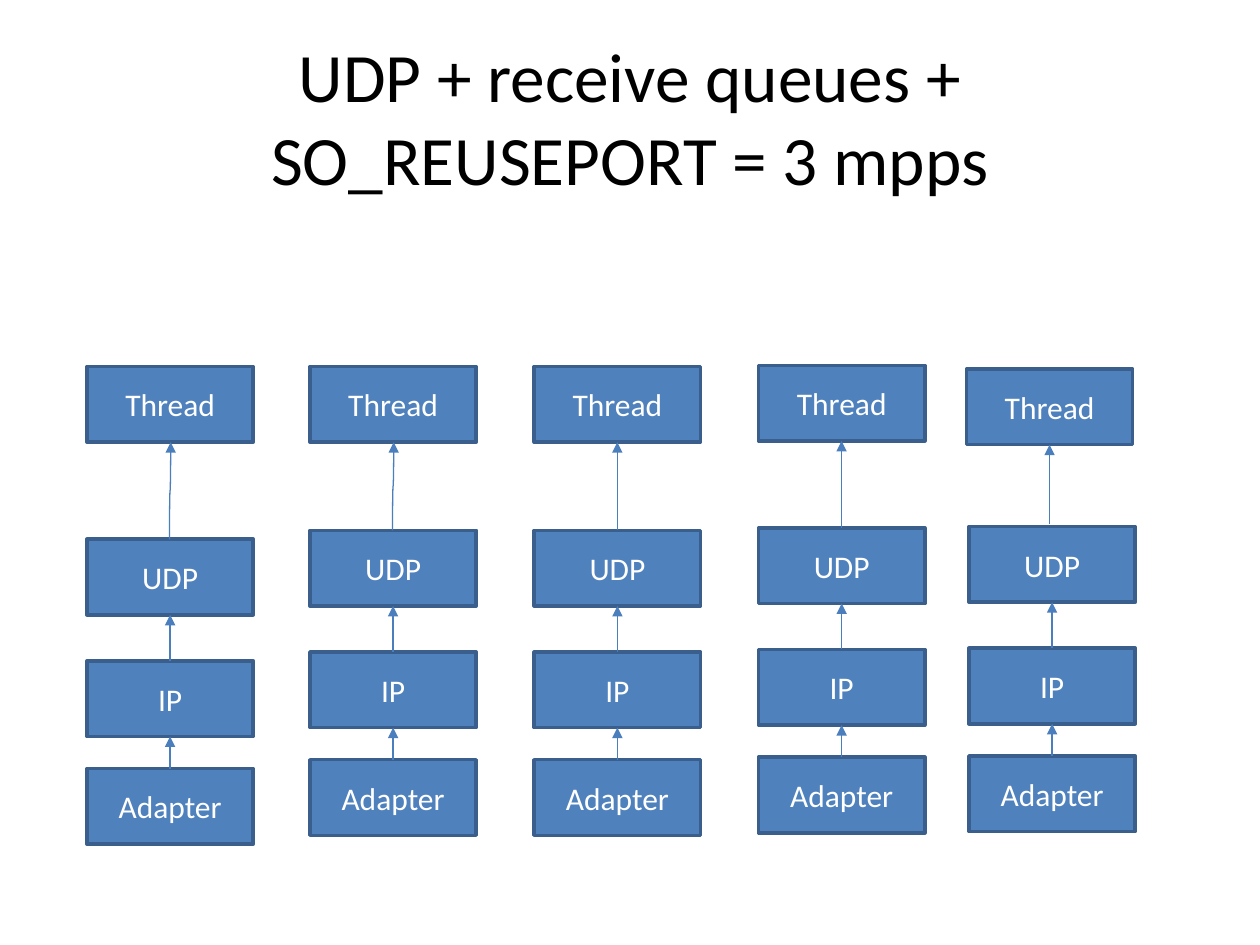
from pptx import Presentation
from pptx.dml.color import RGBColor
from pptx.enum.shapes import MSO_CONNECTOR, MSO_SHAPE
from pptx.enum.text import MSO_ANCHOR, PP_ALIGN
from pptx.oxml.ns import qn
from pptx.util import Inches, Pt
from lxml.etree import SubElement

COLORS = {"box": "4F81BD", "border": "3A5F8C", "arrow": "4B7EBC",
          "title": "000000", "label": "FFFFFF"}
BOX_WIDTH, BOX_HEIGHT = 13.2, 6
IP_DROP, ADAPTER_DROP = 9.65, 18.2
UP = "16200000"
# left, thread left, thread top, UDP top, thread arrow start, arrow slant
STACKS = [
    (6.9, 6.9, 29.1, 42.8, 42.8, 0.1),
    (24.6, 24.6, 29.1, 42.1, 42.1, 0.1),
    (42.4, 42.4, 29.1, 42.1, 42.1, 0),
    (60.2, 60.2, 29, 41.9, 41.9, 0),
    (76.9, 76.7, 29.3, 41.8, 41.6, 0),
]


def color(name):
    return RGBColor.from_string(COLORS[name])


def write(shape, text, size=18, ink="label", font="Calibri"):
    frame = shape.text_frame
    frame.word_wrap = True
    frame.vertical_anchor = MSO_ANCHOR.MIDDLE
    paragraph = frame.paragraphs[0]
    paragraph.alignment = PP_ALIGN.CENTER
    run = paragraph.add_run()
    run.text = text
    run.font.name = font
    run.font.size = Pt(size)
    run.font.color.rgb = color(ink)


class Diagram:
    """Draws on one slide using a grid of 100 columns by 75 rows."""

    def __init__(self, slide, unit=0.1):
        self.shapes = slide.shapes
        self.unit = unit

    def grid(self, *lengths):
        return [Inches(length * self.unit) for length in lengths]

    def title(self, text, left, top, width, height):
        heading = self.shapes.add_textbox(*self.grid(left, top, width, height))
        write(heading, text, size=39.6, ink="title")

    def box(self, text, left, top):
        layer = self.shapes.add_shape(
            MSO_SHAPE.RECTANGLE, *self.grid(left, top, BOX_WIDTH, BOX_HEIGHT))
        layer.shadow.inherit = False
        layer.fill.solid()
        layer.fill.fore_color.rgb = color("box")
        layer.line.color.rgb = color("border")
        layer.line.width = Pt(2)
        write(layer, text)

    def arrow(self, kind, *ends):
        link = self.shapes.add_connector(kind, *self.grid(*ends))
        link.line.color.rgb = color("arrow")
        link.line.width = Pt(0.75)
        SubElement(link.line._get_or_add_ln(), qn("a:tailEnd"), type="triangle")
        SubElement(link._element.spPr, qn("a:effectLst"))
        return link

    def straight_arrow(self, x, start, end):
        self.arrow(MSO_CONNECTOR.STRAIGHT, x, start, x, end)

    def curved_arrow(self, x, start, end, slant):
        middle, reach = (start + end) / 2, (start - end) / 2
        link = self.arrow(MSO_CONNECTOR.CURVE, x - reach, middle - slant / 2,
                          x + reach, middle + slant / 2)
        link._element.spPr.find(qn("a:xfrm")).set("rot", UP)

    def stack(self, left, thread_left, thread_top, udp_top, start, slant):
        ip_top, adapter_top = udp_top + IP_DROP, udp_top + ADAPTER_DROP
        center = left + BOX_WIDTH / 2
        self.box("Thread", thread_left, thread_top)
        for text, top in (("UDP", udp_top), ("IP", ip_top), ("Adapter", adapter_top)):
            self.box(text, left, top)
        self.curved_arrow(thread_left + BOX_WIDTH / 2, start,
                          thread_top + BOX_HEIGHT, slant)
        self.straight_arrow(center, ip_top, udp_top + BOX_HEIGHT)
        self.straight_arrow(center, adapter_top, ip_top + BOX_HEIGHT)


def main():
    deck = Presentation()
    deck.slide_width, deck.slide_height = Inches(10), Inches(7.5)
    diagram = Diagram(deck.slides.add_slide(deck.slide_layouts[6]))
    diagram.title("UDP + receive queues + SO_REUSEPORT = 3 mpps", 5, 3, 90, 12.5)
    for stack in STACKS:
        diagram.stack(*stack)
    deck.save("out.pptx")


if __name__ == "__main__":
    main()
